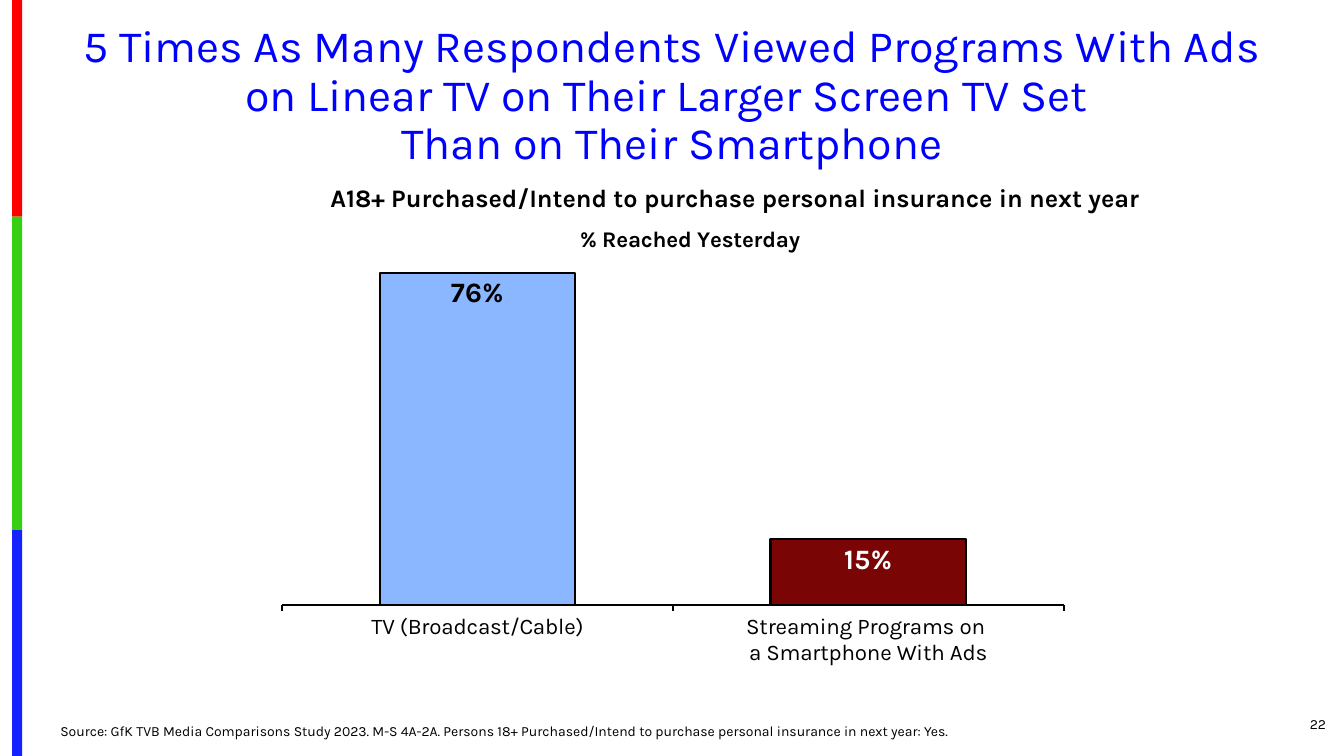
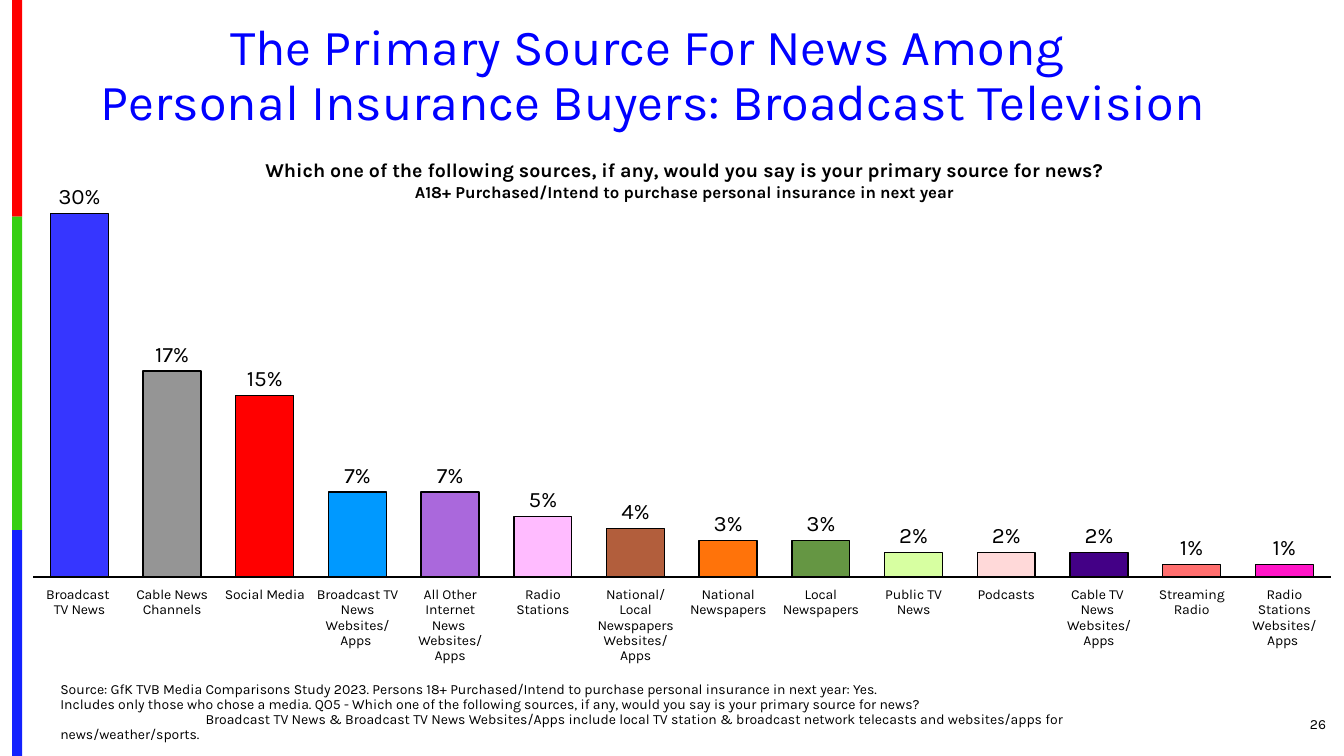
"""Builds two survey slides about media use among personal insurance buyers."""
from lxml.etree import SubElement
from pptx import Presentation
from pptx.chart.data import CategoryChartData
from pptx.dml.color import RGBColor
from pptx.enum.chart import XL_CHART_TYPE, XL_LABEL_POSITION, XL_TICK_LABEL_POSITION, XL_TICK_MARK
from pptx.enum.shapes import MSO_SHAPE
from pptx.enum.text import MSO_ANCHOR, PP_ALIGN
from pptx.oxml.ns import qn
from pptx.util import Inches, Pt

FONT = "Karla"
COLORS = {
    "title": "0000FF", "text": "000000", "light": "FFFFFF", "series": "CCCCCC",
    "band_red": "FE0000", "band_green": "36CF12", "band_blue": "1322FE",
    "television": "8AB7FF", "smartphone": "790505",
    "blue": "3636FF", "gray": "959595", "red": "FF0000", "sky": "0099FF",
    "purple": "AA68DC", "pink": "FFBBFF", "brown": "B25E3C", "orange": "FF730A",
    "green": "659643", "lime": "D7FFA1", "blush": "FFD9D9", "indigo": "430086",
    "coral": "FF6E6E", "magenta": "FF15C7",
}
BANDS = [("band_red", 2.15), ("band_green", 3.11), ("band_blue", 2.24)]
AUDIENCE = "A18+ Purchased/Intend to purchase personal insurance in next year"

REACH = [
    ("TV (Broadcast/Cable)", 0.76, "television"),
    ("Streaming Programs on \na Smartphone With Ads", 0.15, "smartphone"),
]
NEWS_SOURCES = [
    ("Broadcast \nTV News", 0.30, "blue"),
    ("Cable News Channels", 0.17, "gray"),
    ("Social Media", 0.15, "red"),
    ("Broadcast TV News Websites/Apps ", 0.07, "sky"),
    ("All Other Internet\nNews \nWebsites/Apps", 0.07, "purple"),
    ("Radio Stations", 0.05, "pink"),
    ("National/Local Newspapers Websites/Apps", 0.04, "brown"),
    ("National Newspapers", 0.03, "orange"),
    ("Local Newspapers", 0.03, "green"),
    ("Public TV News", 0.02, "lime"),
    ("Podcasts", 0.02, "blush"),
    ("Cable TV \nNews \nWebsites/Apps", 0.02, "indigo"),
    ("Streaming Radio", 0.01, "coral"),
    ("Radio Stations Websites/Apps ", 0.01, "magenta"),
]


def rgb(name):
    return RGBColor.from_string(COLORS[name])


def apply(target, formats):
    for name, value in formats.items():
        setattr(target, name, value)


def style_font(font, size, color="text", bold=False):
    apply(font, {"name": FONT, "size": Pt(size), "bold": bold})
    font.color.rgb = rgb(color)


def style_bar(part, color, line_width):
    part.format.fill.solid()
    part.format.fill.fore_color.rgb = rgb(color)
    part.format.line.color.rgb = rgb("text")
    part.format.line.width = Pt(line_width)


def add_text(page, place, lines, color="text", bold=False, align=PP_ALIGN.LEFT,
             anchor=MSO_ANCHOR.TOP, spacing=1.0):
    box = page.shapes.add_textbox(*map(Inches, place))
    frame = box.text_frame
    apply(frame, {"word_wrap": True, "vertical_anchor": anchor})
    for index, (text, size) in enumerate(lines):
        paragraph = frame.add_paragraph() if index else frame.paragraphs[0]
        apply(paragraph, {"text": text, "alignment": align, "line_spacing": spacing})
        for span in paragraph.runs:
            style_font(span.font, size, color, bold)
    return frame


def add_title(page, place, text, size):
    add_text(page, place, [(text, size)], color="title", align=PP_ALIGN.CENTER, spacing=0.9)


def add_heading(page, place, lines):
    add_text(page, place, lines, bold=True, align=PP_ALIGN.CENTER)


def add_source(page, place, lines):
    return add_text(page, place, [(line, 10) for line in lines],
                    anchor=MSO_ANCHOR.BOTTOM, spacing=0.9)


def add_page(deck, number):
    page = deck.slides.add_slide(deck.slide_layouts[6])
    top = 0
    for color, height in BANDS:
        band = page.shapes.add_shape(MSO_SHAPE.RECTANGLE, *map(Inches, (0.12, top, 0.1, height)))
        band.shadow.inherit = False
        band.fill.solid()
        band.fill.fore_color.rgb = rgb(color)
        band.line.fill.background()
        top += height
    add_text(page, (12.17, 6.98, 1.08, 0.4), [(number, 10)],
             align=PP_ALIGN.RIGHT, anchor=MSO_ANCHOR.MIDDLE)
    return page


def set_layout(parent, position, values):
    for previous in parent.findall(qn("c:layout")):
        parent.remove(previous)
    layout = SubElement(parent, qn("c:layout"))
    parent.insert(position, layout)
    manual = SubElement(layout, qn("c:manualLayout"))
    for name, value in values.items():
        SubElement(manual, qn(f"c:{name}")).set("val", str(value))


def add_columns(page, place, rows, plot_area, maximum, gap, line_width, axis_size, tick,
                label_size, label_color, label_position, bold_labels=False):
    chart_data = CategoryChartData(number_format="0%")
    chart_data.categories = [name for name, _, _ in rows]
    chart_data.add_series("Series 1", [value for _, value, _ in rows])
    chart = page.shapes.add_chart(
        XL_CHART_TYPE.COLUMN_CLUSTERED, *map(Inches, place), chart_data).chart
    apply(chart, {"has_legend": False, "has_title": False})
    style_font(chart.font, 10)

    apply(chart.value_axis, {"minimum_scale": 0, "maximum_scale": maximum,
                             "has_major_gridlines": False, "visible": False})
    axis = chart.category_axis
    apply(axis, {"major_tick_mark": tick, "minor_tick_mark": XL_TICK_MARK.NONE,
                 "tick_label_position": XL_TICK_LABEL_POSITION.LOW})
    style_font(axis.tick_labels.font, axis_size)
    axis.format.line.color.rgb = rgb("text")
    axis.format.line.width = Pt(1.5)

    plot = chart.plots[0]
    apply(plot, {"gap_width": gap, "vary_by_categories": False, "has_data_labels": True})
    labels = plot.series[0].data_labels
    apply(labels, {"show_value": True, "number_format": "0%",
                   "number_format_is_linked": False, "position": label_position})
    style_font(labels.font, label_size, label_color, bold_labels)
    style_bar(plot.series[0], "series", line_width)
    for index, (_, _, color) in enumerate(rows):
        style_bar(plot.series[0].points[index], color, line_width)

    edges = dict(zip("xywh", plot_area))
    set_layout(chart.element.find(f".//{qn('c:plotArea')}"), 0,
               {"layoutTarget": "inner", "xMode": "edge", "yMode": "edge", **edges})
    return chart


def add_chart_title(chart, text, left, top):
    frame = chart.chart_title.text_frame
    frame.text = text
    style_font(frame.paragraphs[0].runs[0].font, 16, bold=True)
    set_layout(chart.chart_title.element, 1,
               {"xMode": "edge", "yMode": "edge", "x": left, "y": top})


def build_reach_page(deck):
    page = add_page(deck, "22")
    chart = add_columns(
        page, (2.67, 1.6, 8, 5.87), REACH, plot_area=(0.016, 0.085, 0.969, 0.665),
        maximum=0.9, gap=100, line_width=1.5, axis_size=16, tick=XL_TICK_MARK.OUTSIDE,
        label_size=20, label_color="light", label_position=XL_LABEL_POSITION.INSIDE_END,
        bold_labels=True)
    add_chart_title(chart, "% Reached Yesterday", 0.38, 0.1)
    label = chart.plots[0].series[0].points[0].data_label
    style_font(label.font, 20, bold=True)
    label.position = XL_LABEL_POSITION.INSIDE_END
    add_title(page, (0.46, 0.19, 12.42, 1.56),
              "5 Times As Many Respondents Viewed Programs With Ads on Linear TV "
              "on Their Larger Screen TV Set \vThan on Their Smartphone", 32)
    add_heading(page, (2.5, 1.76, 9.58, 0.4), [(AUDIENCE, 18)])
    add_source(page, (0.5, 7.14, 9.33, 0.25), [
        "Source: GfK TVB Media Comparisons Study 2023. M-S 4A-2A. Persons 18+ "
        "Purchased/Intend to purchase personal insurance in next year: Yes."])


def build_news_page(deck):
    page = add_page(deck, "26")
    add_columns(
        page, (0.25, 0.67, 13, 5.92), NEWS_SOURCES, plot_area=(0.006, 0.146, 0.99, 0.722),
        maximum=0.35, gap=60, line_width=1, axis_size=10, tick=XL_TICK_MARK.NONE,
        label_size=16, label_color="text", label_position=XL_LABEL_POSITION.OUTSIDE_END)
    add_title(page, (0.09, 0.17, 12.78, 1.19),
              "The Primary Source For News Among \v"
              "Personal Insurance Buyers: Broadcast Television", 36)
    add_heading(page, (2.17, 1.52, 9.24, 0.54), [
        ("Which one of the following sources, if any, would you say is your primary "
         "source for news?", 14),
        (AUDIENCE, 12)])
    source = add_source(page, (0.5, 6.86, 10.17, 0.56), [
        "Source: GfK TVB Media Comparisons Study 2023. Persons 18+ Purchased/Intend to "
        "purchase personal insurance in next year: Yes.",
        "Includes only those who chose a media. QO5 - Which one of the following sources, "
        "if any, would you say is your primary source for news?",
        "Broadcast TV News & Broadcast TV News Websites/Apps include local TV station & "
        "broadcast network telecasts and websites/apps for news/weather/sports."])
    properties = source.paragraphs[-1]._p.get_or_add_pPr()
    properties.set("marL", "0")
    properties.set("indent", str(Inches(1.44)))


def main():
    deck = Presentation()
    apply(deck, {"slide_width": Inches(13.33), "slide_height": Inches(7.5)})
    build_reach_page(deck)
    build_news_page(deck)
    deck.save("out.pptx")


if __name__ == "__main__":
    main()
